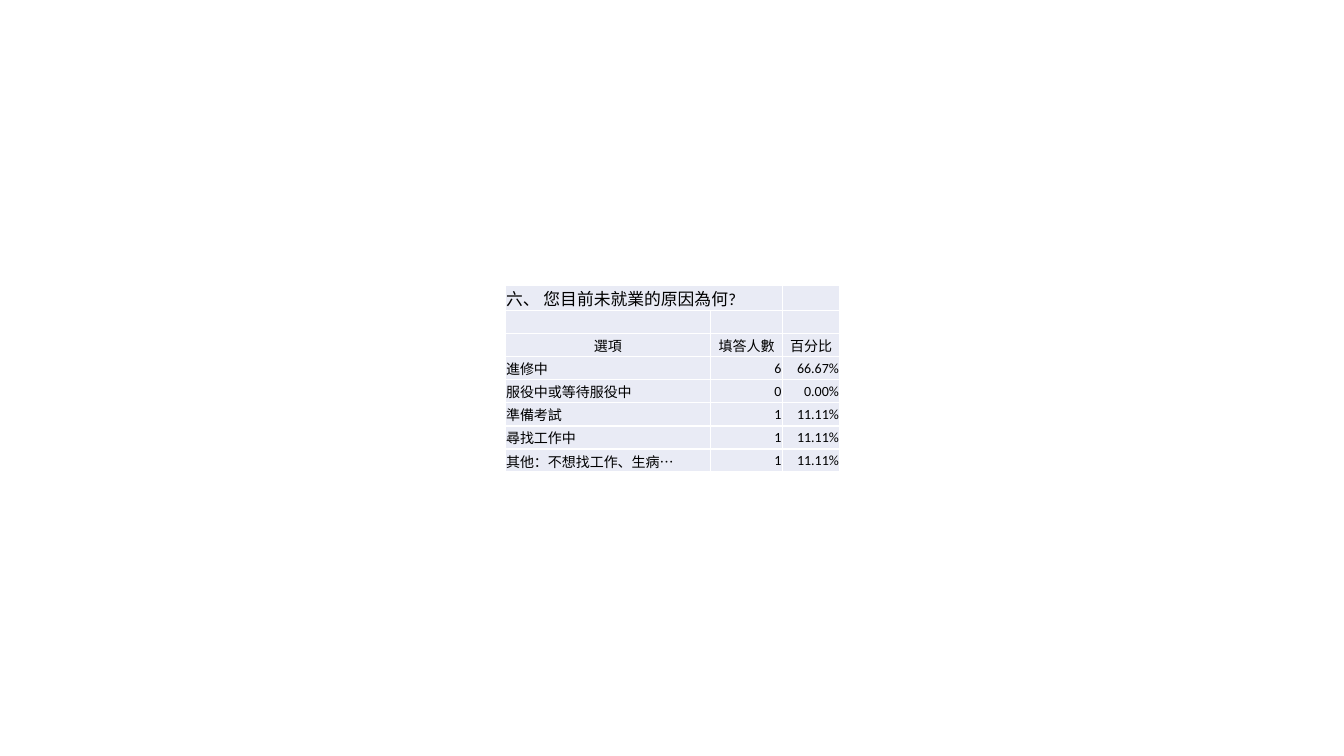
from lxml import etree
from pptx import Presentation
from pptx import util as u
from pptx.dml.color import RGBColor
from pptx.enum import text
from pptx.oxml.ns import qn

COLORS = {"text": "000000", "cell": "E9EBF5", "border": "FFFFFF"}
LEFT, CENTER, RIGHT = text.PP_ALIGN.LEFT, text.PP_ALIGN.CENTER, text.PP_ALIGN.RIGHT

QUESTION = "六、 您目前未就業的原因為何?"
HEADINGS = ("選項", "填答人數", "百分比")
ANSWERS = [
    ("進修中", "6", "66.67%"),
    ("服役中或等待服役中", "0", "0.00%"),
    ("準備考試", "1", "11.11%"),
    ("尋找工作中", "1", "11.11%"),
    ("其他：不想找工作、生病…", "1", "11.11%"),
]


class SurveySlide:
    font = "Calibri"
    body_size = 10
    title_size = 12

    def __init__(self, prs):
        self.slide = prs.slides.add_slide(prs.slide_layouts[6])

    def table(self, left, top, height, widths, rows):
        """Add a plain grid; each row is (values, alignments, font size)."""
        frame = self.slide.shapes.add_table(
            len(rows), len(widths), u.Inches(left), u.Inches(top),
            u.Inches(sum(widths)), u.Inches(height))
        table = frame.table
        table.first_row = table.horz_banding = False
        for column, width in zip(table.columns, widths):
            column.width = u.Inches(width)
        for r, (values, aligns, size) in enumerate(rows):
            for c, (value, align) in enumerate(zip(values, aligns)):
                self.cell(table.cell(r, c), value, align, size)
        return table

    def cell(self, cell, value, align, size):
        cell.margin_left = cell.margin_top = cell.margin_right = u.Inches(0.01)
        cell.margin_bottom = 0
        cell.vertical_anchor = text.MSO_ANCHOR.MIDDLE
        self.borders(cell)
        cell.fill.solid()
        cell.fill.fore_color.rgb = RGBColor.from_string(COLORS["cell"])
        p = cell.text_frame.paragraphs[0]
        p.alignment = align
        p.text = value
        for run in p.runs:
            run.font.name = self.font
            run.font.size = u.Pt(size)
            run.font.color.rgb = RGBColor.from_string(COLORS["text"])
        if not value:
            # Keeps an empty row from growing to the default text size
            etree.SubElement(p._p, qn("a:endParaRPr"), sz=str(size * 100))

    def borders(self, cell):
        props = cell._tc.get_or_add_tcPr()
        for side in ("a:lnL", "a:lnR", "a:lnT", "a:lnB"):
            line = etree.SubElement(props, qn(side), w=str(u.Pt(1)))
            fill = etree.SubElement(line, qn("a:solidFill"))
            etree.SubElement(fill, qn("a:srgbClr"), val=COLORS["border"])


def main():
    prs = Presentation()
    prs.slide_width, prs.slide_height = u.Inches(13.33), u.Inches(7.5)
    survey = SurveySlide(prs)
    rows = [
        ((QUESTION, "", ""), (LEFT,) * 3, survey.title_size),
        (("", "", ""), (LEFT,) * 3, survey.body_size),
        (HEADINGS, (CENTER,) * 3, survey.body_size),
    ]
    rows += [(answer, (LEFT, RIGHT, RIGHT), survey.body_size) for answer in ANSWERS]
    table = survey.table(5.01, 2.83, 1.83, (2.04, 0.71, 0.57), rows)
    table.cell(0, 0).merge(table.cell(0, 1))
    prs.save("out.pptx")


if __name__ == "__main__":
    main()
